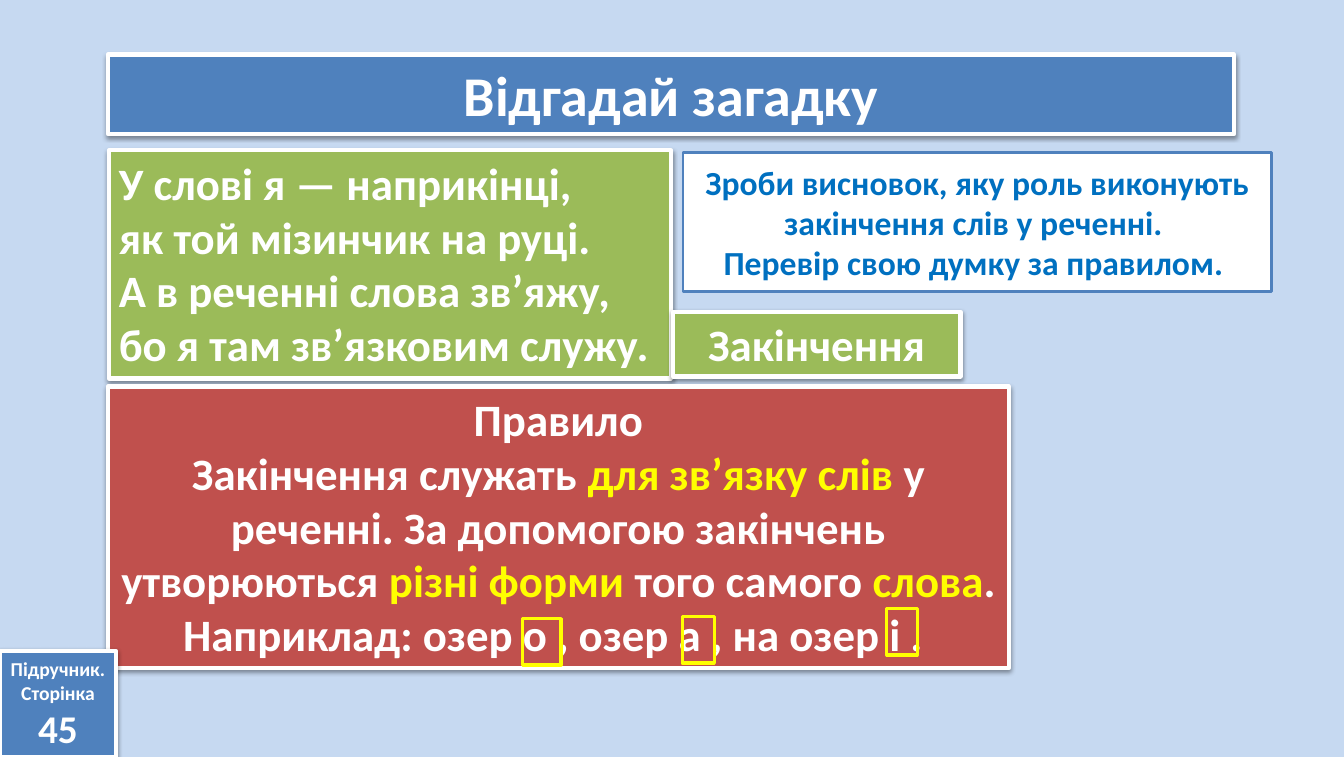
from lxml import etree
from pptx import Presentation
from pptx.dml.color import RGBColor
from pptx.enum.shapes import MSO_SHAPE
from pptx.enum.text import MSO_ANCHOR, PP_ALIGN
from pptx.oxml.ns import qn
from pptx.util import Emu, Pt

RECTANGLE = MSO_SHAPE.RECTANGLE
LEFT, CENTER = PP_ALIGN.LEFT, PP_ALIGN.CENTER
TOP, MIDDLE = MSO_ANCHOR.TOP, MSO_ANCHOR.MIDDLE

SKY = RGBColor(0xC6, 0xD9, 0xF1)
BLUE = RGBColor(0x4F, 0x81, 0xBD)
GREEN = RGBColor(0x9B, 0xBB, 0x59)
RED = RGBColor(0xC0, 0x50, 0x4D)
WHITE = RGBColor(0xFF, 0xFF, 0xFF)
YELLOW = RGBColor(0xFF, 0xFF, 0x00)
TEXT_BLUE = RGBColor(0x00, 0x70, 0xC0)

FONT = "Calibri"
PX = 9144
SLIDE_SIZE = (1332, 750)

TITLE = ["Відгадай загадку"]
RIDDLE = [
    "У слові я — наприкінці,",
    "як той мізинчик на руці.",
    "А в реченні слова зв’яжу,",
    "бо я там зв’язковим служу.",
]
ANSWER = ["Закінчення"]
TASK = [
    "Зроби висновок, яку роль виконують закінчення слів у реченні. ",
    "Перевір свою думку за правилом. ",
]
RULE = [
    "Правило",
    [
        ("Закінчення служать ", {}),
        ("для зв’язку слів", {"color": YELLOW}),
        (" у реченні. За допомогою закінчень утворюються ", {}),
        ("різні форми ", {"color": YELLOW}),
        ("того самого ", {}),
        ("слова", {"color": YELLOW}),
        (". Наприклад: озер о , озер а , на озер і . ", {}),
    ],
]
PAGE = ["Підручник.", "Сторінка", [("45", {"size": 28})]]

PANELS = [
    (TITLE, (107, 54, 1116, 79), BLUE, {"size": 40}),
    (RIDDLE, (108, 149, 557, 226), GREEN, {"align": LEFT, "anchor": TOP}),
    (ANSWER, (667, 309, 285, 64), GREEN, {"anchor": TOP}),
    (TASK, (677, 151, 583, 138), WHITE, {"size": 24, "color": TEXT_BLUE}),
    (RULE, (107, 383, 893, 279), RED, {"anchor": TOP}),
    (PAGE, (0, 645, 115, 105), BLUE, {"size": 14}),
]
ENDING_FRAMES = [(518, 613, 38, 46), (676, 611, 32, 46), (879, 603, 30, 46)]


def add_box(slide, box, line_color, line_width, fill=None):
    shape = slide.shapes.add_shape(RECTANGLE, *(Emu(value * PX) for value in box))
    shape.shadow.inherit = False
    if fill is None:
        shape.fill.background()
    else:
        shape.fill.solid()
        shape.fill.fore_color.rgb = fill
    shape.line.color.rgb = line_color
    shape.line.width = Pt(line_width)
    return shape


def add_shadow(shape):
    effects = shape._element.spPr.find(qn("a:effectLst"))
    shadow = etree.SubElement(effects, qn("a:outerShdw"), blurRad="40000",
                              dist="20000", dir="5400000", rotWithShape="0")
    color = etree.SubElement(shadow, qn("a:srgbClr"), val="000000")
    etree.SubElement(color, qn("a:alpha"), val="38000")


def write_text(shape, lines, size=32, color=WHITE, align=CENTER, anchor=MIDDLE):
    frame = shape.text_frame
    frame.word_wrap = True
    frame.vertical_anchor = anchor
    for index, line in enumerate(lines):
        paragraph = frame.add_paragraph() if index else frame.paragraphs[0]
        paragraph.alignment = align
        runs = [(line, {})] if isinstance(line, str) else line
        for text, changes in runs:
            run = paragraph.add_run()
            run.text = text
            run.font.name = FONT
            run.font.bold = True
            run.font.size = Pt(changes.get("size", size))
            run.font.color.rgb = changes.get("color", color)


def main():
    presentation = Presentation()
    presentation.slide_width, presentation.slide_height = (
        Emu(value * PX) for value in SLIDE_SIZE)
    slide = presentation.slides.add_slide(presentation.slide_layouts[6])
    slide.background.fill.solid()
    slide.background.fill.fore_color.rgb = SKY

    for lines, box, fill, text_format in PANELS:
        if fill == WHITE:
            shape = add_box(slide, box, BLUE, 2, fill)
        else:
            shape = add_box(slide, box, WHITE, 3, fill)
            add_shadow(shape)
        write_text(shape, lines, **text_format)

    for box in ENDING_FRAMES:
        add_box(slide, box, YELLOW, 2.25)

    presentation.save("out.pptx")


if __name__ == "__main__":
    main()
